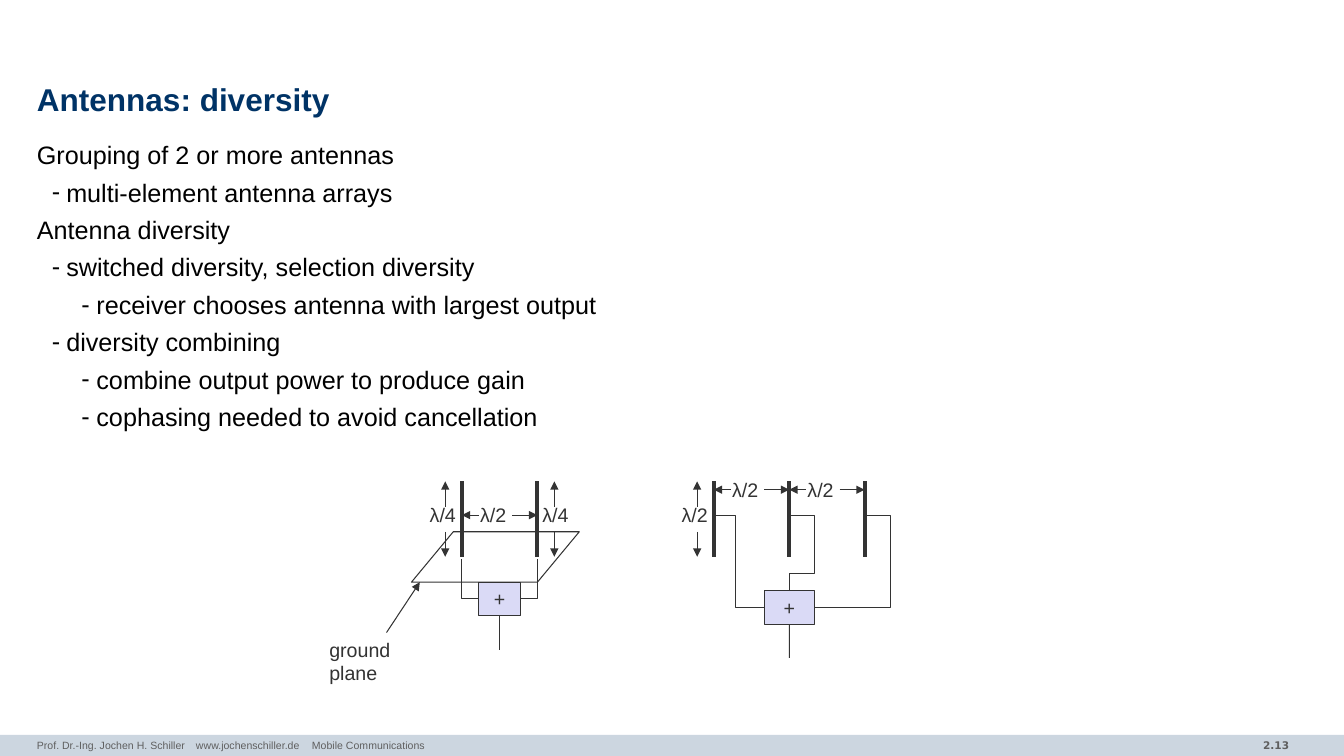
from lxml import etree
from pptx import Presentation
from pptx.dml.color import RGBColor
from pptx.enum.shapes import MSO_CONNECTOR, MSO_SHAPE
from pptx.enum.text import MSO_ANCHOR, MSO_AUTO_SIZE, PP_ALIGN
from pptx.oxml.ns import qn
from pptx.util import Cm, Pt

STRAIGHT = MSO_CONNECTOR.STRAIGHT
RECT, SLANT = MSO_SHAPE.RECTANGLE, MSO_SHAPE.PARALLELOGRAM
MIDDLE, FIXED = MSO_ANCHOR.MIDDLE, MSO_AUTO_SIZE.NONE
LEFT, CENTER, RIGHT = PP_ALIGN.LEFT, PP_ALIGN.CENTER, PP_ALIGN.RIGHT
BOTTOM = 2

COLORS = {"band": "CCD6E0", "foot": "5F5F5F", "title": "003366",
          "body": "000000", "ink": "333333", "sum": "DADAF6"}
WIDTH, HEIGHT = 33.87, 19.05
GAP = MAST = 1.9  # antenna spacing and length
INDENTS = [(0, 0), (0.74, -0.36), (1.5, -0.38)]
POINTS = [
    (0, "Grouping of 2 or more antennas"),
    (1, "multi-element antenna arrays"),
    (0, "Antenna diversity"),
    (1, "switched diversity, selection diversity"),
    (2, "receiver chooses antenna with largest output"),
    (1, "diversity combining"),
    (2, "combine output power to produce gain"),
    (2, "cophasing needed to avoid cancellation"),
]


def color(key):
    return RGBColor.from_string(COLORS[key])


def style(para, size, key, face="Arial", bold=False):
    font = para.font
    font.size, font.name, font.bold = Pt(size), face, bold
    font.color.rgb = color(key)


def place(shape, x, y, w, h):
    shape.left, shape.top, shape.width, shape.height = map(Cm, (x, y, w, h))


def pad(frame, x, y):
    frame.margin_left = frame.margin_right = Cm(x)
    frame.margin_top = frame.margin_bottom = Cm(y)


def label(slide, text, x, y, w=1.27, h=0.85):
    box = slide.shapes.add_textbox(Cm(x), Cm(y), Cm(w), Cm(h))
    frame = box.text_frame
    frame.word_wrap = True
    frame.text = text
    style(frame.paragraphs[0], 14, "ink")
    return frame


def line(slide, x1, y1, x2, y2, width=0.75, arrow=False):
    link = slide.shapes.add_connector(STRAIGHT, Cm(x1), Cm(y1), Cm(x2), Cm(y2))
    link.line.color.rgb = color("ink")
    link.line.width = Pt(width)
    props = link._element.spPr
    if arrow:
        etree.SubElement(props.find(qn("a:ln")), qn("a:tailEnd"), type="triangle")
    etree.SubElement(props, qn("a:effectLst"))
    return link


def outline(shape):
    shape.shadow.inherit = False
    shape.fill.background()
    shape.line.color.rgb = color("ink")
    shape.line.width = Pt(0.75)


def wire(slide, x, y, points):
    spots = [(Cm(x + dx), Cm(y + dy)) for dx, dy in points]
    pen = slide.shapes.build_freeform(*spots[0])
    pen.add_line_segments(spots[1:], close=False)
    outline(pen.convert_to_shape())


def adder(slide, x, y, w, h=0.85):
    """Draw a summing box with its output line."""
    box = slide.shapes.add_shape(RECT, Cm(x), Cm(y), Cm(w), Cm(h))
    outline(box)
    box.fill.solid()
    box.fill.fore_color.rgb = color("sum")
    frame = box.text_frame
    frame.text = "+"
    frame.word_wrap = False
    frame.vertical_anchor = MIDDLE
    para = frame.paragraphs[0]
    para.alignment = CENTER
    style(para, 14, "ink")
    mid = x + w / 2
    stem = line(slide, mid, y + h, mid, y + h + 0.85)
    stem.begin_connect(box, BOTTOM)


def masts(slide, x, y, count):
    for i in range(count):
        line(slide, x + i * GAP, y, x + i * GAP, y + MAST, 3)


def tall(slide, text, x, y, shift):
    """Mark the antenna length along a vertical line at x."""
    line(slide, x, y + 0.64, x, y, arrow=True)
    line(slide, x, y + 1.27, x, y + MAST, arrow=True)
    label(slide, text, x - shift, y + 0.42)


def wide(slide, x, y):
    """Mark the spacing from the antenna at x to the next one."""
    line(slide, x + 0.42, y, x, y, arrow=True)
    line(slide, x + 1.27, y, x + GAP, y, arrow=True)
    label(slide, "λ/2", x + 0.21, y - 0.43)


def ground(slide, x, y):
    """Draw the pair of antennas over a ground plane."""
    masts(slide, x, y, 2)
    adder(slide, x + 0.42, y + 2.54, 1.06)
    plane = slide.shapes.add_shape(SLANT, Cm(x - 1.27), Cm(y + 1.27),
                                   Cm(4.23), Cm(1.27))
    plane.adjustments[0] = 0.83
    outline(plane)
    for foot, side in ((0, 0.42), (GAP, 1.48)):
        wire(slide, x, y, [(side, 2.96), (foot, 2.96), (foot, 1.96)])
    tall(slide, "λ/4", x - 0.42, y, 0.64)
    tall(slide, "λ/4", x + 2.33, y, 0.55)
    wide(slide, x, y + 0.85)
    label(slide, "ground\vplane", x - 3.59, y + 3.81, 2.3, 1.4)
    line(slide, x - 1.9, y + 3.81, x - 1.06, y + 2.54, arrow=True)


def array(slide, x, y):
    """Draw the row of three combined antennas."""
    masts(slide, x, y, 3)
    tall(slide, "λ/2", x - 0.42, y, 0.64)
    for i in range(2):
        wide(slide, x + i * GAP, y + 0.21)
    adder(slide, x + 1.27, y + 2.75, 1.27)
    wire(slide, x, y, [(2 * GAP, 0.85), (4.45, 0.85), (4.45, 3.17), (2.54, 3.17)])
    wire(slide, x, y, [(0, 0.85), (0.55, 0.85), (0.55, 3.17), (1.27, 3.17)])
    wire(slide, x, y, [(GAP, 0.85), (2.54, 0.85), (2.54, 2.32),
                       (GAP, 2.32), (GAP, 2.75)])


def heading(slide, x, y, w, h):
    title = slide.shapes.title
    place(title, x, y, w, h)
    frame = title.text_frame
    frame.text = "Antennas: diversity"
    frame.auto_size, frame.vertical_anchor = FIXED, MIDDLE
    pad(frame, 0, 0)
    para = frame.paragraphs[0]
    para.alignment, para.line_spacing = LEFT, 0.85
    style(para, 22.5, "title", bold=True)


def bullets(slide, x, y, w, h):
    body = slide.placeholders[1]
    place(body, x, y, w, h)
    frame = body.text_frame
    frame.auto_size = FIXED
    pad(frame, 0, 0)
    for i, (level, text) in enumerate(POINTS):
        para = frame.add_paragraph() if i else frame.paragraphs[0]
        para.text, para.level, para.line_spacing = text, level, 1.02
        para.space_before = Pt(4.7 if i else 0)
        props = para._p.get_or_add_pPr()
        margin, indent = INDENTS[level]
        props.set("marL", str(Cm(margin)))
        props.set("indent", str(Cm(indent)))
        if level:
            tint = etree.SubElement(props, qn("a:buClr"))
            etree.SubElement(tint, qn("a:srgbClr"), val=COLORS["body"])
            etree.SubElement(props, qn("a:buFont"), typeface="Arial")
            etree.SubElement(props, qn("a:buChar"), char="-")
        else:
            etree.SubElement(props, qn("a:buNone"))
        style(para, 18, "body")


def footer(slide, y, h):
    band = slide.shapes.add_shape(RECT, 0, Cm(y), Cm(WIDTH), Cm(h))
    band.shadow.inherit = False
    band.fill.solid()
    band.fill.fore_color.rgb = color("band")
    band.line.fill.background()
    page = label(slide, "2.13", 28.19, y - 0.03, 4.55, h)
    page.paragraphs[0].alignment = RIGHT
    style(page.paragraphs[0], 7.5, "foot", "DejaVu Sans", True)
    credit = label(slide, "", 0.93, y - 0.03, 22.15, h)
    pad(credit, 0, 0.13)
    para = credit.paragraphs[0]
    para.text = "Prof. Dr.-Ing. Jochen H. Schiller\twww.jochenschiller.de\tMobile Communications"
    tabs = etree.Element(qn("a:tabLst"))
    para._p.get_or_add_pPr().insert(0, tabs)
    for stop in (4.01, 6.93):
        etree.SubElement(tabs, qn("a:tab"), pos=str(Cm(stop)), algn="l")
    style(para, 7.5, "foot")


def main():
    deck = Presentation()
    deck.slide_width, deck.slide_height = Cm(WIDTH), Cm(HEIGHT)
    slide = deck.slides.add_slide(deck.slide_layouts[1])
    footer(slide, 18.52, 0.53)
    heading(slide, 0.93, 1.98, 32, 1.19)
    bullets(slide, 0.93, 3.5, 32, 14.5)
    ground(slide, 11.64, 12.13)
    array(slide, 17.99, 12.13)
    deck.save("out.pptx")


if __name__ == "__main__":
    main()
